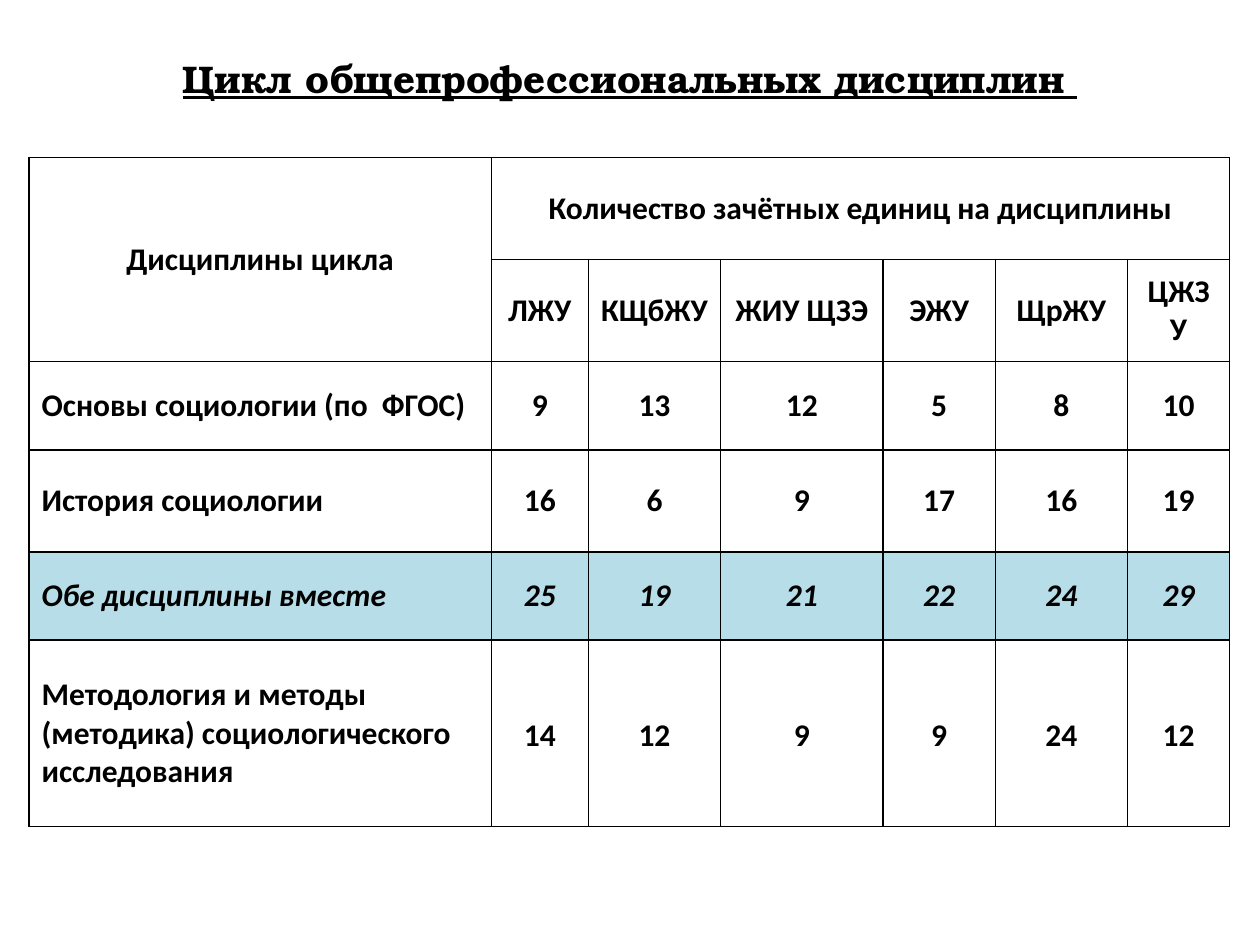
import pptx
import pptx.util
import pptx.dml.color
import pptx.enum.text
import pptx.oxml
import pptx.oxml.ns
from pptx.util import Inches, Pt

# Content
TITLE = "Цикл общепрофессиональных дисциплин "
HEAD = ["Дисциплины цикла", "Количество зачётных единиц на дисциплины"]
UNITS = ["ЛЖУ", "КЩбЖУ", "ЖИУ ЩЗЭ", "ЭЖУ", "ЩрЖУ", "ЦЖЗУ"]
ROWS = [
    ("Основы социологии (по  ФГОС)", [9, 13, 12, 5, 8, 10]),
    ("История социологии", [16, 6, 9, 17, 16, 19]),
    ("Обе дисциплины вместе", [25, 19, 21, 22, 24, 29]),
    ("Методология и методы (методика) социологического исследования",
     [14, 12, 9, 9, 24, 12]),
]
SUM_ROW = 4
LAST_ROW = 5
WIDTHS = [3.67, 0.77, 1.05, 1.29, 0.89, 1.05, 0.81]
HEIGHTS = [0.81, 0.81, 0.7, 0.81, 0.7, 1.48]

THEME = {
    "ink": "000000", "plain": "FFFFFF", "sum": "B7DEE8",
    "title_font": "TeX Gyre Bonum", "title_size": 22,
    "font": "Calibri", "size": 18, "line": 1,
}
ALIGN = pptx.enum.text.PP_ALIGN
MIDDLE = pptx.enum.text.MSO_ANCHOR.MIDDLE


def color(name):
    return pptx.dml.color.RGBColor.from_string(THEME[name])


def style(par, font, size, align):
    par.alignment = align
    for run in par.runs:
        run.font.name = font
        run.font.size = Pt(size)
        run.font.bold = True
        run.font.color.rgb = color("ink")


def frame(cell):
    """Draw all four borders; they must come before the fill."""
    props = cell._tc.get_or_add_tcPr()
    space = pptx.oxml.ns.nsdecls("a")
    for spot, side in enumerate(["lnL", "lnR", "lnT", "lnB"]):
        props.insert(spot, pptx.oxml.parse_xml(
            f'<a:{side} {space} w="{Pt(THEME["line"])}"><a:solidFill>'
            f'<a:srgbClr val="{THEME["ink"]}"/></a:solidFill></a:{side}>'))


deck = pptx.Presentation()
deck.slide_width, deck.slide_height = Inches(10), Inches(7.5)
slide = deck.slides.add_slide(deck.slide_layouts[6])

# Title
box = slide.shapes.add_textbox(Inches(0.5), Inches(0.3), Inches(9), Inches(0.64))
text = box.text_frame
text.word_wrap = True
text.vertical_anchor = MIDDLE
text.text = TITLE
style(text.paragraphs[0], THEME["title_font"], THEME["title_size"], ALIGN.CENTER)
text.paragraphs[0].runs[0].font.underline = True

# Table grid
table = slide.shapes.add_table(
    len(HEIGHTS), len(WIDTHS), Inches(0.23), Inches(1.25),
    Inches(sum(WIDTHS)), Inches(sum(HEIGHTS))).table
table.first_row = table.horz_banding = False
for col, width in zip(table.columns, WIDTHS):
    col.width = Inches(width)
for row, height in zip(table.rows, HEIGHTS):
    row.height = Inches(height)
table.cell(0, 0).merge(table.cell(1, 0))
table.cell(0, 1).merge(table.cell(0, len(UNITS)))

# Cells
grid = [HEAD, [""] + UNITS] + [[name] + marks for name, marks in ROWS]
for r, line in enumerate(grid):
    for c in range(len(WIDTHS)):
        cell = table.cell(r, c)
        cell.vertical_anchor = MIDDLE
        cell.fill.solid()
        cell.fill.fore_color.rgb = color("sum" if r == SUM_ROW else "plain")
        frame(cell)
        if cell.is_spanned:
            continue
        cell.text_frame.text = str(line[c])
        par = cell.text_frame.paragraphs[0]
        side = ALIGN.LEFT if c == 0 and r > 1 else ALIGN.CENTER
        style(par, THEME["font"], THEME["size"], side)
        par.runs[0].font.italic = r == SUM_ROW
        if r == LAST_ROW and c > 0:
            par.line_spacing = 1.15
            cell.margin_left = cell.margin_right = Inches(0.07)
            cell.margin_top = cell.margin_bottom = 0

deck.save("out.pptx")
